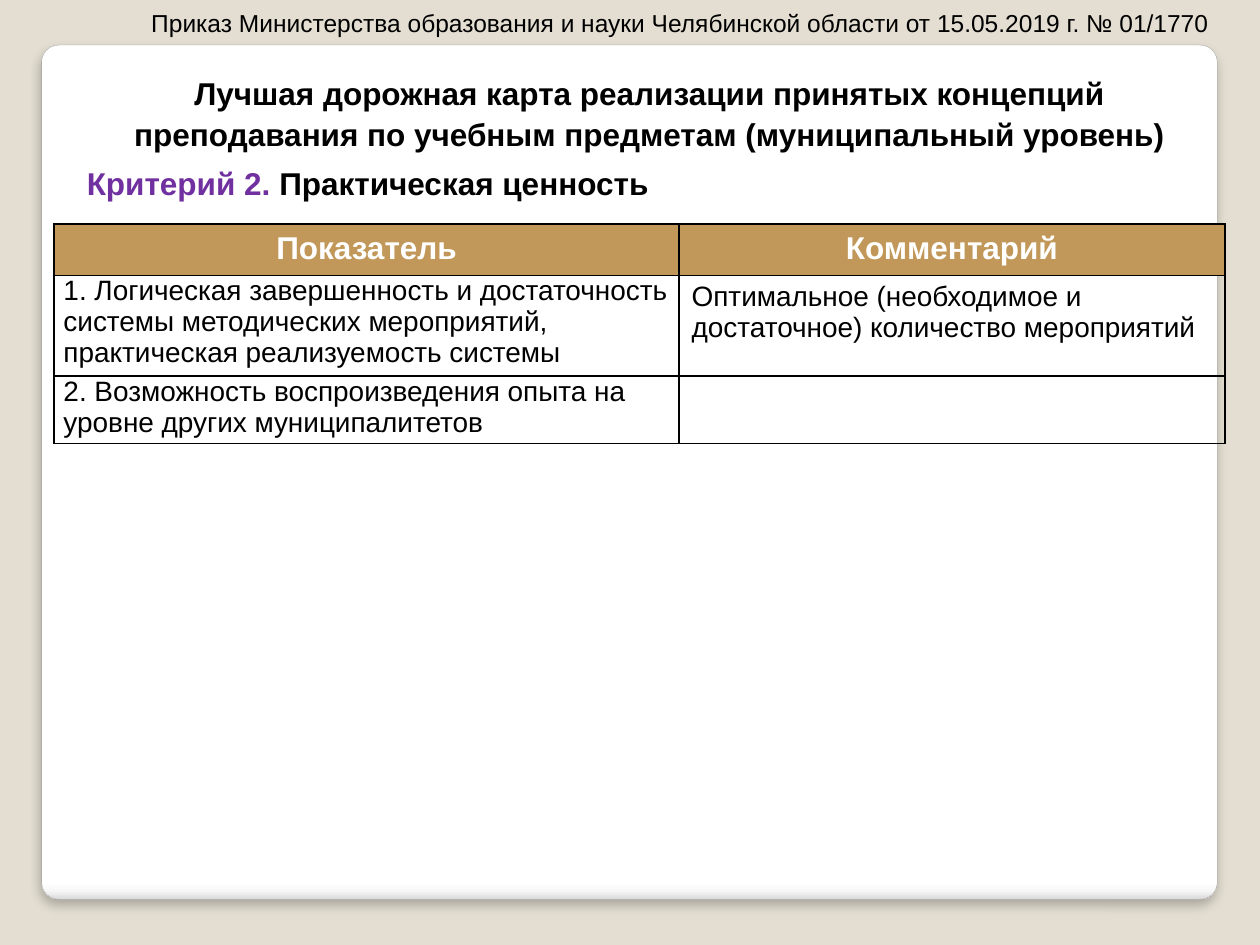
"""Build a slide with the assessment table for criterion 2, practical value."""
from lxml.etree import SubElement
from pptx import Presentation
from pptx.dml.color import RGBColor
from pptx.enum.shapes import MSO_SHAPE
from pptx.enum.text import MSO_ANCHOR, PP_ALIGN
from pptx.oxml import parse_xml
from pptx.oxml.ns import nsdecls, qn
from pptx.util import Cm, Pt


def color(value):
    return RGBColor.from_string(value)


def add_text(left, top, width, height, runs, size, bold, alignment):
    box = slide.shapes.add_textbox(Cm(left), Cm(top), Cm(width), Cm(height))
    box.text_frame.word_wrap = True
    paragraph = box.text_frame.paragraphs[0]
    paragraph.alignment = alignment
    paragraph.font.name = "Arial"
    paragraph.font.size = Pt(size)
    paragraph.font.bold = bold
    for text, value in runs:
        run = paragraph.add_run()
        run.text = text
        run.font.color.rgb = color(value)
    return paragraph


presentation = Presentation()
presentation.slide_width = Cm(25.4)
presentation.slide_height = Cm(19.05)
slide = presentation.slides.add_slide(presentation.slide_layouts[6])
slide.background.fill.solid()
slide.background.fill.fore_color.rgb = color("E3DED1")

panel = slide.shapes.add_shape(MSO_SHAPE.ROUNDED_RECTANGLE, Cm(0.84), Cm(0.91), Cm(23.7), Cm(17.22))
panel.adjustments[0] = 0.02
panel.line.color.rgb = color("A4A4A4")
panel.line.width = Pt(0.16)
panel.fill.gradient()
panel.fill.gradient_angle = 270
stop_list = panel.fill.gradient_stops[0]._gs.getparent()
for stop in list(stop_list):
    stop_list.remove(stop)
for position, value in [(0, "FFFFFF"), (98, "FFFFFF"), (99, "F7F7F7"), (100, "DADADA")]:
    stop = SubElement(stop_list, qn("a:gs"), pos=str(position * 1000))
    SubElement(stop, qn("a:srgbClr"), val=value)
panel.shadow.inherit = False
effects = panel.element.spPr.find(qn("a:effectLst"))
effects.append(parse_xml(
    f'<a:outerShdw {nsdecls("a")} blurRad="{Pt(6)}" dist="{Pt(4)}" dir="5400000" algn="t" rotWithShape="0">'
    '<a:srgbClr val="000000"><a:alpha val="25000"/></a:srgbClr></a:outerShdw>'))

title = add_text(1.5, 1.32, 23.19, 1.8, [
    ("Лучшая дорожная карта реализации принятых концепций преподавания "
     "по учебным предметам (муниципальный уровень)", "000000")], 18, True, PP_ALIGN.CENTER)
criterion = add_text(1.5, 3.12, 22.4, 1.02, [
    ("Критерий 2. ", "7030A0"), ("Практическая ценность", "000000")], 18, True, PP_ALIGN.JUSTIFY)
for paragraph in (title, criterion):
    paragraph.line_spacing = 1.07

rows = [
    ("Показатель", "Комментарий"),
    ("1. Логическая завершенность и достаточность системы методических мероприятий, "
     "практическая реализуемость системы",
     "Оптимальное (необходимое и достаточное) количество мероприятий"),
    ("2. Возможность воспроизведения опыта на уровне других муниципалитетов", ""),
]
column_widths = [12.6, 11]
row_heights = [1.03, 2.03, 1.35]
table = slide.shapes.add_table(
    len(rows), len(column_widths), Cm(1.09), Cm(4.52), Cm(sum(column_widths)), Cm(sum(row_heights))).table
for column, width in zip(table.columns, column_widths):
    column.width = Cm(width)
for row, height in zip(table.rows, row_heights):
    row.height = Cm(height)

for row_index, texts in enumerate(rows):
    header = row_index == 0
    for column_index, text in enumerate(texts):
        cell = table.cell(row_index, column_index)
        cell.text = text
        cell.vertical_anchor = MSO_ANCHOR.TOP
        if not header and column_index == 0:
            cell.margin_left = cell.margin_right = Cm(0.19)
            cell.margin_top = cell.margin_bottom = 0
        paragraph = cell.text_frame.paragraphs[0]
        paragraph.alignment = PP_ALIGN.CENTER if header else PP_ALIGN.LEFT
        paragraph.font.name = "Arial"
        paragraph.font.size = Pt(18 if header else 16)
        paragraph.font.bold = header
        paragraph.font.color.rgb = color("FFFFFF" if header else "000000")
        properties = cell._tc.get_or_add_tcPr()
        for side in ("a:lnL", "a:lnR", "a:lnT", "a:lnB"):
            border = SubElement(properties, qn(side), w=str(Pt(1)))
            SubElement(SubElement(border, qn("a:solidFill")), qn("a:srgbClr"), val="000000")
        if header:
            cell.fill.solid()
            cell.fill.fore_color.rgb = color("C19859")
        else:
            cell.fill.background()

add_text(2.8, 0.03, 22.6, 0.86, [
    ("Приказ Министерства образования и науки Челябинской области от 15.05.2019 г. № 01/1770", "000000")],
    14, False, PP_ALIGN.LEFT)

presentation.save("out.pptx")
